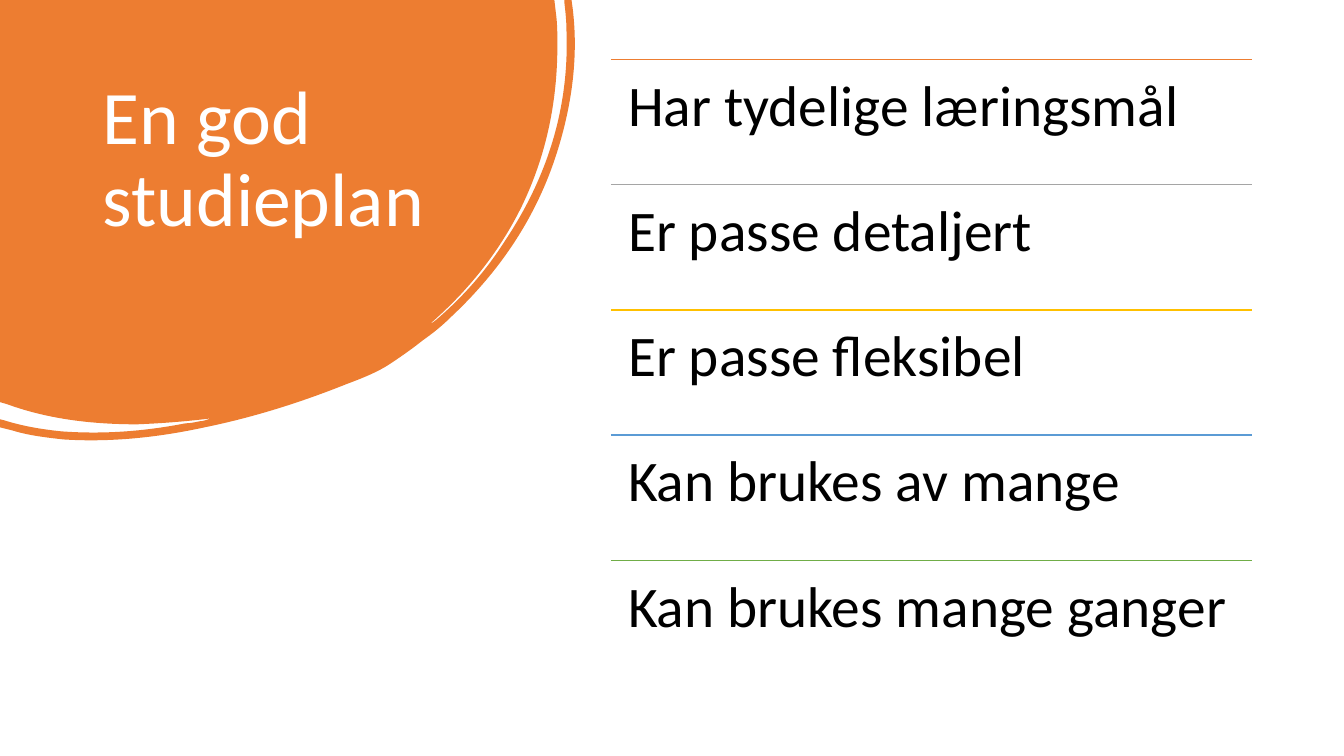
from pptx import Presentation, util as u
from pptx.dml.color import RGBColor
from pptx.enum import shapes, text
from pptx.oxml.ns import qn
from lxml import etree

TITLE = "En god studieplan"
QUALITIES = [
    ("Har tydelige læringsmål", "ED7D31"),
    ("Er passe detaljert", "A5A5A5"),
    ("Er passe fleksibel", "FFC000"),
    ("Kan brukes av mange", "5B9BD5"),
    ("Kan brukes mange ganger", "70AD47"),
]
THEME = {
    "font": "Calibri", "blob": "ED7D31", "title": "FFFFFF", "body": "000000",
    "title_size": 54, "body_size": 41, "rule": 1, "leading": 0.9,
}
PAGE = (960, 540)
TITLE_BOX = (66.24, 53.28, 253.44, 159.84)
LIST_LEFT, LIST_TOP, LIST_WIDTH, ROW_PITCH = 436.32, 42.48, 457.92, 89.46
TITLE_INSETS = (7.2, 3.6, 7.2, 3.6)
ROW_INSETS = (12.3,) * 4

GRID = 0.72
BLOB_SIZE = (571, 437)
BLOB = [
    (0, 0), (550, 0), (552, 17),
    (553, 26, 553, 36, 553, 45), (553, 101, 542, 154, 518, 204),
    (496, 249, 465, 288, 427, 321), (429, 321, 430, 319, 432, 318),
    (459, 295, 482, 269, 501, 239), (543, 176, 565, 107, 562, 30),
    (562, 21, 561, 12, 560, 3), (560, 0), (567, 0), (568, 7),
    (574, 54, 568, 102, 553, 150), (533, 214, 497, 268, 448, 314),
    (439, 323, 429, 331, 419, 338), (409, 346, 399, 353, 387, 361),
    (375, 369, 360, 375, 344, 381), (299, 399, 252, 414, 203, 424),
    (157, 434, 110, 439, 63, 436), (45, 434, 28, 432, 12, 427),
    (0, 424), (0, 416), (4, 417),
    (23, 423, 42, 426, 61, 428), (103, 431, 143, 428, 184, 420),
    (189, 420, 193, 419, 198, 418), (202, 418, 206, 416, 210, 415),
    (186, 418, 161, 420, 136, 421), (92, 421, 48, 416, 7, 401), (0, 399),
]


def assign(target, values):
    for name, value in values.items():
        setattr(target, name, value)


def add_blob(page):
    start, *segments = BLOB
    builder = page.shapes.build_freeform(*start, scale=u.Pt(GRID))
    ends = [segment[-2:] for segment in segments]
    builder.add_line_segments(ends, close=True)
    blob = builder.convert_to_shape()
    outline = next(blob._element.iter(qn("a:path")))
    for step, segment in zip(outline.findall(qn("a:lnTo")), segments):
        if len(segment) == 6:
            step.tag = qn("a:cubicBezTo")
            for point in list(step):
                step.remove(point)
            for x, y in zip(segment[::2], segment[1::2]):
                etree.SubElement(step, qn("a:pt"), x=str(x), y=str(y))
    width, height = BLOB_SIZE
    outline.set("w", str(width))
    outline.set("h", str(height))
    assign(blob, {"width": u.Pt(width * GRID), "height": u.Pt(height * GRID)})
    blob.shadow.inherit = False
    blob.fill.solid()
    blob.fill.fore_color.rgb = RGBColor.from_string(THEME["blob"])
    blob.line.fill.background()


def add_text(page, words, place, insets, role):
    box = page.shapes.add_textbox(*map(u.Pt, place))
    sides = ("margin_left", "margin_top", "margin_right", "margin_bottom")
    assign(box.text_frame, {
        "word_wrap": True, "vertical_anchor": text.MSO_ANCHOR.TOP,
        **dict(zip(sides, map(u.Pt, insets))),
    })
    para = box.text_frame.paragraphs[0]
    para.line_spacing = THEME["leading"]
    span = para.add_run()
    span.text = words
    assign(span.font, {"name": THEME["font"], "size": u.Pt(THEME[role + "_size"])})
    span.font.color.rgb = RGBColor.from_string(THEME[role])


def add_rule(page, top, color):
    ends = (LIST_LEFT, top, LIST_LEFT + LIST_WIDTH, top)
    rule = page.shapes.add_connector(shapes.MSO_CONNECTOR.STRAIGHT, *map(u.Pt, ends))
    rule.line.width = u.Pt(THEME["rule"])
    rule.line.color.rgb = RGBColor.from_string(color)
    etree.SubElement(rule._element.spPr, qn("a:effectLst"))


def main():
    deck = Presentation()
    assign(deck, {"slide_width": u.Pt(PAGE[0]), "slide_height": u.Pt(PAGE[1])})
    page = deck.slides.add_slide(deck.slide_layouts[6])
    add_blob(page)
    add_text(page, TITLE, TITLE_BOX, TITLE_INSETS, "title")
    for row, (quality, color) in enumerate(QUALITIES):
        top = LIST_TOP + row * ROW_PITCH
        add_rule(page, top, color)
        add_text(page, quality, (LIST_LEFT, top, LIST_WIDTH, ROW_PITCH), ROW_INSETS, "body")
    deck.save("out.pptx")


if __name__ == "__main__":
    main()
